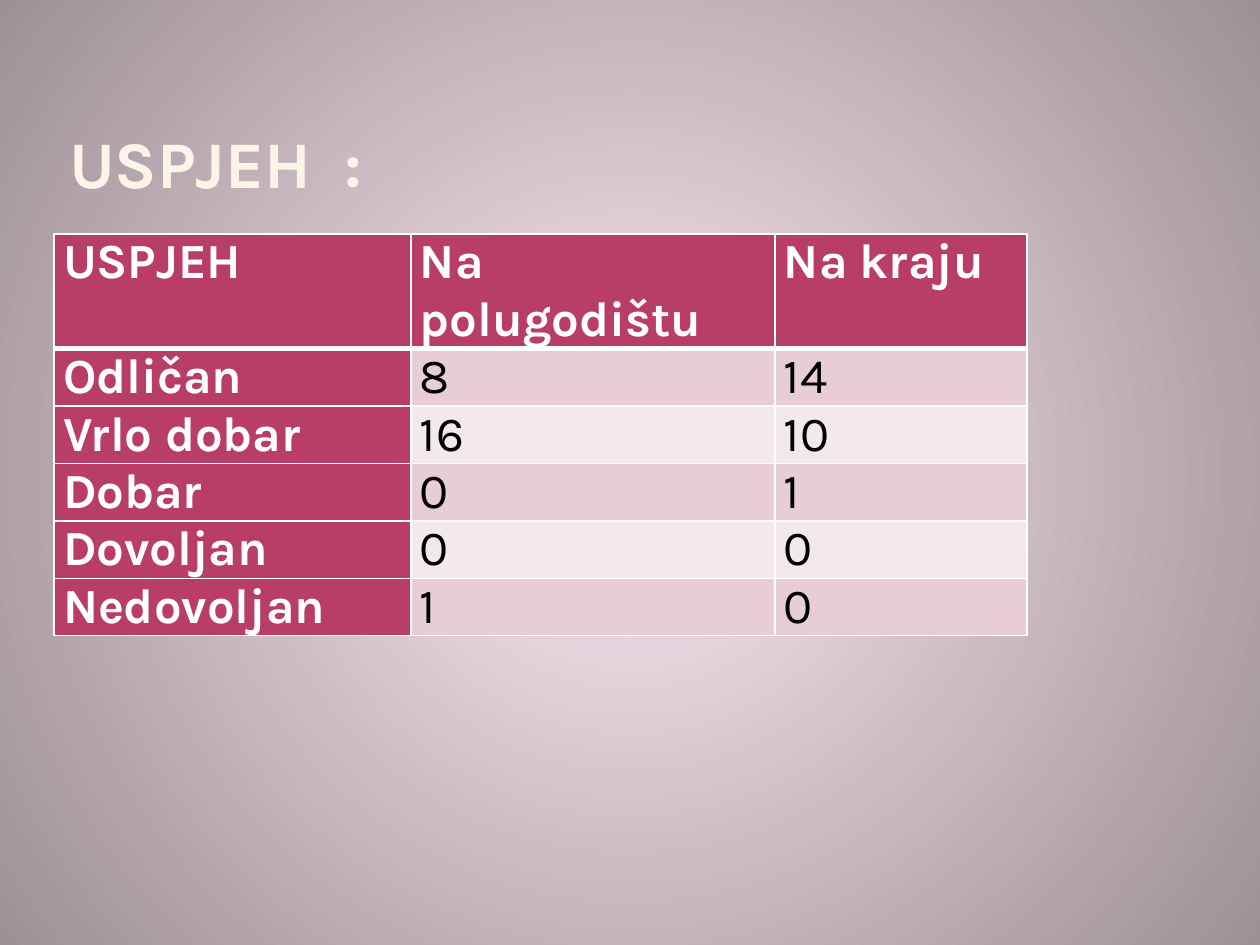
from pptx import Presentation
from pptx import util as u
from pptx.dml.color import RGBColor
from pptx.enum import text
from pptx.oxml import parse_xml
from pptx.oxml.ns import nsdecls

PX = 914400 / 126
WHITE = RGBColor(0xFF, 0xFF, 0xFF)
BLACK = RGBColor(0x00, 0x00, 0x00)
CREAM = RGBColor(0xFE, 0xF3, 0xE8)
RASPBERRY = RGBColor(0xB8, 0x3D, 0x68)
ROSE = RGBColor(0xE6, 0xCE, 0xD4)
PALE_ROSE = RGBColor(0xF3, 0xE8, 0xEB)
GLOW = RGBColor(0xFC, 0xE7, 0xF1)
DUSK = RGBColor(0x9D, 0x90, 0x96)

GRADES = [
    ("USPJEH", "Na polugodištu", "Na kraju"),
    ("Odličan", "8", "14"),
    ("Vrlo dobar", "16", "10"),
    ("Dobar", "0", "1"),
    ("Dovoljan", "0", "0"),
    ("Nedovoljan", "1", "0"),
]


def px(length):
    return u.Emu(round(length * PX))


def assign(target, values):
    for name, value in values.items():
        setattr(target, name, value)


class SlideBuilder:
    font = "Karla"

    def __init__(self, deck):
        self.page = deck.slides.add_slide(deck.slide_layouts[5])

    def background(self, center, edge):
        self.page._element.cSld.insert(0, parse_xml(
            f'<p:bg {nsdecls("p", "a")}><p:bgPr><a:gradFill rotWithShape="1"><a:gsLst>'
            f'<a:gs pos="0"><a:srgbClr val="{center}"/></a:gs>'
            f'<a:gs pos="100000"><a:srgbClr val="{edge}"/></a:gs></a:gsLst>'
            '<a:path path="circle"><a:fillToRect l="50000" t="50000" r="50000" b="50000"/>'
            '</a:path></a:gradFill><a:effectLst/></p:bgPr></p:bg>'))

    def label(self, frame, words, size, color, bold):
        para = frame.paragraphs[0]
        para.alignment = text.PP_ALIGN.LEFT
        span = para.add_run()
        span.text = words
        assign(span.font, {"name": self.font, "size": u.Pt(size), "bold": bold})
        span.font.color.rgb = color

    def title(self, words, left, top, width, height):
        box = self.page.shapes.title
        assign(box, {"left": px(left), "top": px(top),
                     "width": px(width), "height": px(height)})
        frame = box.text_frame
        assign(frame, {"word_wrap": True, "auto_size": text.MSO_AUTO_SIZE.NONE,
                       "vertical_anchor": text.MSO_ANCHOR.BOTTOM,
                       "margin_left": px(6), "margin_right": px(6),
                       "margin_top": 0, "margin_bottom": 0})
        self.label(frame, words, 38, CREAM, True)

    def borders(self, cell, row):
        points = {"L": 1, "R": 1, "T": 3 if row == 1 else 1, "B": 3 if row == 0 else 1}
        for side, weight in points.items():
            cell._tc.get_or_add_tcPr().append(parse_xml(
                f'<a:ln{side} {nsdecls("a")} w="{u.Pt(weight)}"><a:solidFill>'
                f'<a:srgbClr val="{WHITE}"/></a:solidFill></a:ln{side}>'))

    def table(self, rows, left, top, widths, heights):
        table = self.page.shapes.add_table(
            len(rows), len(widths), px(left), px(top),
            px(sum(widths)), px(sum(heights))).table
        assign(table, {"first_row": True, "first_col": True})
        for column, width in zip(table.columns, widths):
            column.width = px(width)
        for line, height in zip(table.rows, heights):
            line.height = px(height)
        for row, values in enumerate(rows):
            for col, words in enumerate(values):
                cell = table.cell(row, col)
                heading = row == 0 or col == 0
                assign(cell, {"margin_left": px(9), "margin_right": px(9),
                              "margin_top": 0, "margin_bottom": 0})
                self.borders(cell, row)
                cell.fill.solid()
                band = ROSE if row % 2 else PALE_ROSE
                cell.fill.fore_color.rgb = RASPBERRY if heading else band
                self.label(cell.text_frame, words, 28, WHITE if heading else BLACK, heading)


def main():
    deck = Presentation()
    assign(deck, {"slide_width": px(1260), "slide_height": px(945)})
    slide = SlideBuilder(deck)
    slide.background(GLOW, DUSK)
    slide.title("USPJEH  :", 63, 44, 998, 158)
    slide.table(GRADES, 54, 234, [357, 364, 252], [114] + [57] * 5)
    deck.save("out.pptx")


if __name__ == "__main__":
    main()
